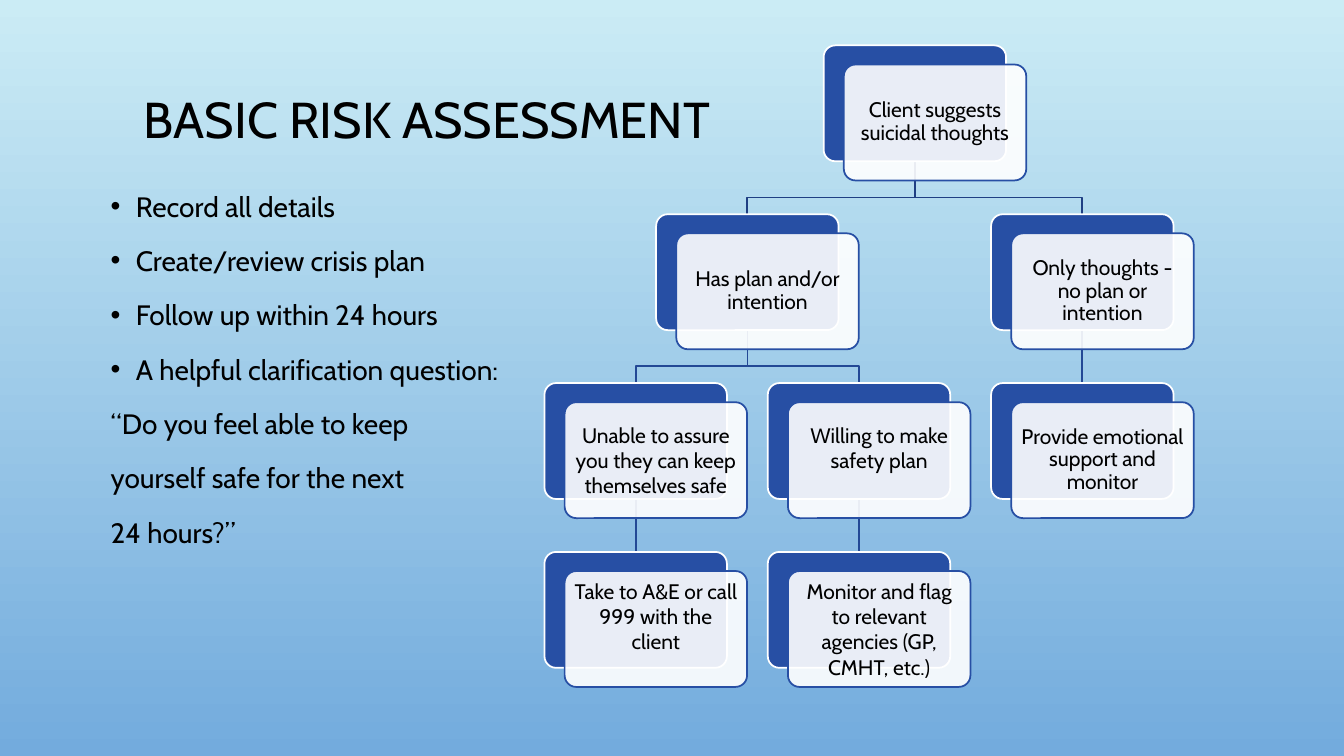
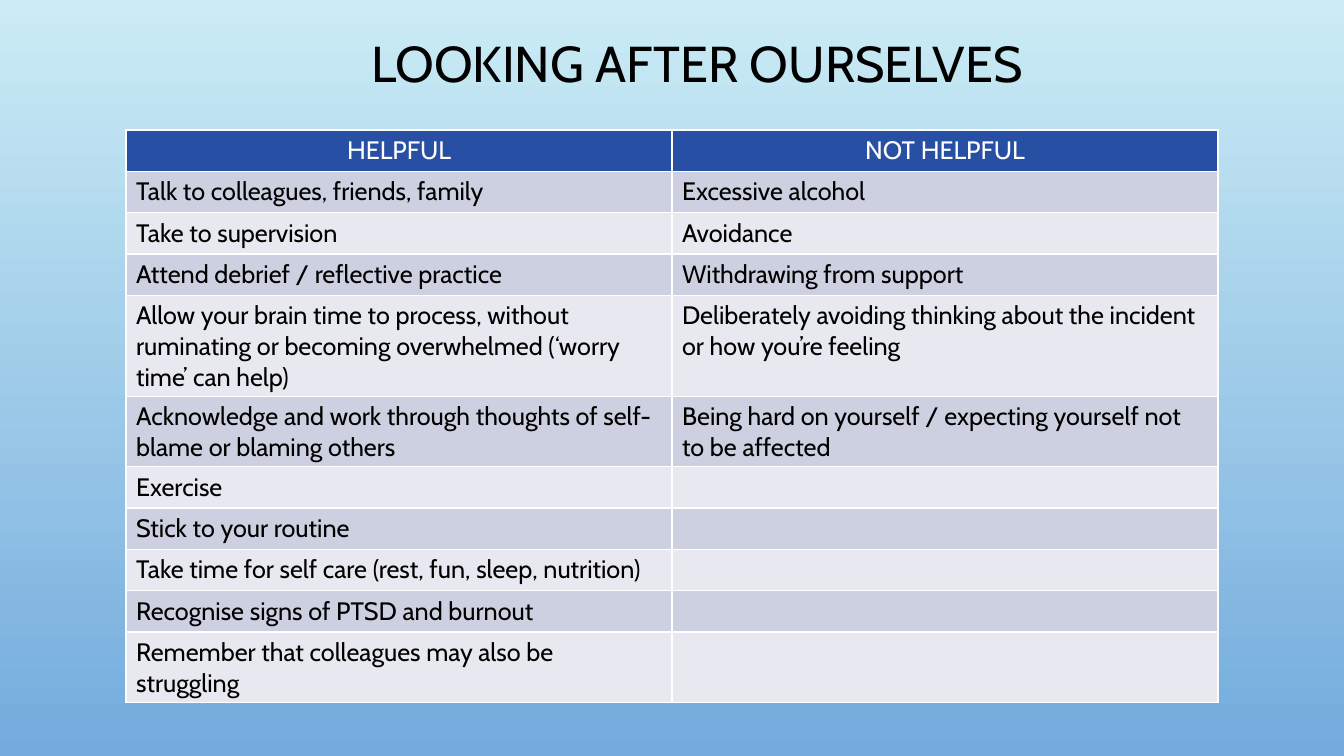
from lxml.etree import SubElement
from pptx import Presentation
from pptx.dml.color import RGBColor
from pptx.enum.shapes import MSO_CONNECTOR, MSO_SHAPE
from pptx.enum.text import MSO_ANCHOR, PP_ALIGN
from pptx.oxml.ns import qn
from pptx.util import Inches, Pt

BLUE, WHITE, BLACK = "274FA4", "FFFFFF", "000000"
SKY = ("CBECF5", "73ABDD")
BANDS = ("E8E9F0", "CDD0E0")
LINKS = ("1F3F83", "234895", "234895")
FONT = "Cabin"
MID = {"alignment": PP_ALIGN.CENTER}
SNUG = {**MID, "line_spacing": 0.9}

POINTS = ["Record all details", "Create/review crisis plan",
          "Follow up within 24 hours", "A helpful clarification question:"]
QUOTE = ["“Do you feel able to keep", "yourself safe for the next", "24 hours?”"]

# text, column, level, parent, paragraph format, bottom inset
NODES = {
    "start": ("Client suggests suicidal thoughts", 1.25, 0, None, SNUG, 0.06),
    "plan": ("Has plan and/or intention", 0.5, 1, "start", SNUG, 0.06),
    "unsafe": ("Unable to assure you they can keep themselves safe",
               0, 2, "plan", MID, 0.06),
    "call": ("Take to A&E or call 999 with the client", 0, 3, "unsafe", MID, 0.31),
    "willing": ("Willing to make safety plan", 1, 2, "plan", MID, 0.31),
    "flag": ("Monitor and flag to relevant agencies (GP, CMHT, etc.)",
             1, 3, "willing", MID, 0.06),
    "thoughts": ("Only thoughts - no plan or intention", 2, 1, "start", SNUG, 0.06),
    "support": ("Provide emotional support and monitor",
                2, 2, "thoughts", SNUG, 0.06),
}

ROWS = [
    ("HELPFUL", "NOT HELPFUL"),
    ("Talk to colleagues, friends, family", "Excessive alcohol"),
    ("Take to supervision", "Avoidance"),
    ("Attend debrief / reflective practice", "Withdrawing from support"),
    ("Allow your brain time to process, without ruminating or becoming "
     "overwhelmed (‘worry time’ can help)",
     "Deliberately avoiding thinking about the incident or how you’re feeling"),
    ("Acknowledge and work through thoughts of self-blame or blaming others",
     "Being hard on yourself / expecting yourself not to be affected"),
    ("Exercise", ""),
    ("Stick to your routine", ""),
    ("Take time for self care (rest, fun, sleep, nutrition)", ""),
    ("Recognise signs of PTSD and burnout", ""),
    ("Remember that colleagues may also be struggling", ""),
]


def tint(code):
    """Turn a hex string into a colour."""
    return RGBColor.from_string(code)


def apply(item, form):
    """Set each attribute named in a dict."""
    for name, value in form.items():
        setattr(item, name, value)


def write(para, text, size, color=BLACK, form=None):
    """Write one styled run in a paragraph."""
    apply(para, form or {})
    run = para.add_run()
    run.text = text
    apply(run.font, {"name": FONT, "size": Pt(size), "bold": False})
    run.font.color.rgb = tint(color)


def add_slide(deck):
    """Add a blank slide with the sky gradient."""
    slide = deck.slides.add_slide(deck.slide_layouts[6])
    fill = slide.background.fill
    fill.gradient()
    fill.gradient_angle = 270
    for stop, code, place in zip(fill.gradient_stops, SKY, (0, 1)):
        stop.color.rgb = tint(code)
        stop.position = place
    return slide


def add_box(slide, box):
    """Add a wrapping text box and return its frame."""
    frame = slide.shapes.add_textbox(*map(Inches, box)).text_frame
    frame.word_wrap = True
    return frame


def add_title(slide, text, box):
    """Write the slide title in the middle of its box."""
    frame = add_box(slide, box)
    frame.vertical_anchor = MSO_ANCHOR.MIDDLE
    write(frame.paragraphs[0], text, 36, form=SNUG)


def add_notes(slide, box):
    """Write the bullet points and the quoted question."""
    frame = add_box(slide, box)
    for i, text in enumerate(POINTS + QUOTE):
        para = frame.paragraphs[0] if i == 0 else frame.add_paragraph()
        if text in POINTS:
            props = para._p.get_or_add_pPr()
            props.set("marL", str(Inches(0.25)))
            props.set("indent", str(Inches(-0.25)))
            SubElement(props, qn("a:buFont"), typeface="Arial")
            SubElement(props, qn("a:buChar"), char="•")
        write(para, text, 20, form={"line_spacing": 1.2,
                                    "space_before": Pt(10 if i else 0)})


def add_card(slide, box, fill, edge):
    """Add one rounded card."""
    card = slide.shapes.add_shape(MSO_SHAPE.ROUNDED_RECTANGLE, *map(Inches, box))
    card.adjustments[0] = 0.1
    card.shadow.inherit = False
    card.fill.solid()
    card.fill.fore_color.rgb = tint(fill)
    card.line.color.rgb = tint(edge)
    card.line.width = Pt(1.25)
    return card


def add_node(slide, box, text, form, foot):
    """Add a blue card with a pale text card over it."""
    left, top, width, height = box
    add_card(slide, box, BLUE, WHITE)
    card = add_card(slide, (left + 0.2, top + 0.19, width, height), WHITE, BLUE)
    shade = card.element.spPr.find(".//" + qn("a:srgbClr"))
    SubElement(shade, qn("a:alpha"), val="90000")
    frame = card.text_frame
    side = Inches(0.06)
    apply(frame, {"word_wrap": True, "vertical_anchor": MSO_ANCHOR.MIDDLE,
                  "margin_left": side, "margin_right": side,
                  "margin_top": side, "margin_bottom": Inches(foot)})
    write(frame.paragraphs[0], text, 15, form=form)


def add_link(slide, start, end, color):
    """Join two points by a straight line or a stepped one."""
    (x1, y1), (x2, y2) = [tuple(map(Inches, point)) for point in (start, end)]
    if x1 == x2:
        line = slide.shapes.add_connector(MSO_CONNECTOR.STRAIGHT, x1, y1, x2, y2)
        SubElement(line._element.spPr, qn("a:effectLst"))
    else:
        bend = y1 + Inches(0.36)
        path = slide.shapes.build_freeform(x1, y1)
        path.add_line_segments([(x1, bend), (x2, bend), (x2, y2)], close=False)
        line = path.convert_to_shape()
        line.fill.background()
        line.shadow.inherit = False
    line.line.color.rgb = tint(color)
    line.line.width = Pt(1.25)


def add_tree(slide, left, top):
    """Place the tree of cards and the lines that join them."""
    width, height = 1.81, 1.15
    spots = {key: (left + node[1] * 2.215, top + node[2] * 1.675)
             for key, node in NODES.items()}
    for key, node in NODES.items():
        if node[3]:
            (x1, y1), (x2, y2) = spots[node[3]], spots[key]
            add_link(slide, (x1 + width / 2, y1 + height),
                     (x2 + width / 2, y2), LINKS[node[2] - 1])
    for key, (text, _, _, _, form, foot) in NODES.items():
        add_node(slide, (*spots[key], width, height), text, form, foot)


def add_cell(cell, text, fill, color, form):
    """Fill, frame and write one table cell."""
    props = cell._tc.get_or_add_tcPr()
    for side in ("a:lnL", "a:lnR", "a:lnT", "a:lnB"):
        edge = SubElement(props, qn(side), w=str(Pt(1)))
        SubElement(SubElement(edge, qn("a:solidFill")), qn("a:srgbClr"), val=WHITE)
    cell.fill.solid()
    cell.fill.fore_color.rgb = tint(fill)
    if text:
        write(cell.text_frame.paragraphs[0], text, 18, color, form)


def add_grid(slide, box):
    """Add the banded table of habits."""
    table = slide.shapes.add_table(len(ROWS), 2, *map(Inches, box)).table
    apply(table, {"first_row": True, "horz_banding": False})
    for i, row in enumerate(ROWS):
        table.rows[i].height = Inches(0.41)
        look = (BANDS[i % 2], BLACK, {}) if i else (BLUE, WHITE, MID)
        for j, text in enumerate(row):
            add_cell(table.cell(i, j), text, *look)


def add_risk(deck):
    """Build the risk slide."""
    slide = add_slide(deck)
    add_title(slide, "BASIC RISK ASSESSMENT", (0.5, 0.34, 7.47, 1.75))
    add_tree(slide, 5.4, 0.45)
    add_notes(slide, (1, 1.76, 4.4, 4.9))


def add_care(deck):
    """Build the care slide."""
    slide = add_slide(deck)
    add_title(slide, "LOOKING AFTER OURSELVES", (1.25, 0.18, 11.33, 0.95))
    add_grid(slide, (1.25, 1.29, 10.83, 4.51))


def main():
    """Build and save the deck."""
    deck = Presentation()
    apply(deck, {"slide_width": Inches(13.33), "slide_height": Inches(7.5)})
    add_risk(deck)
    add_care(deck)
    deck.save("out.pptx")


if __name__ == "__main__":
    main()
